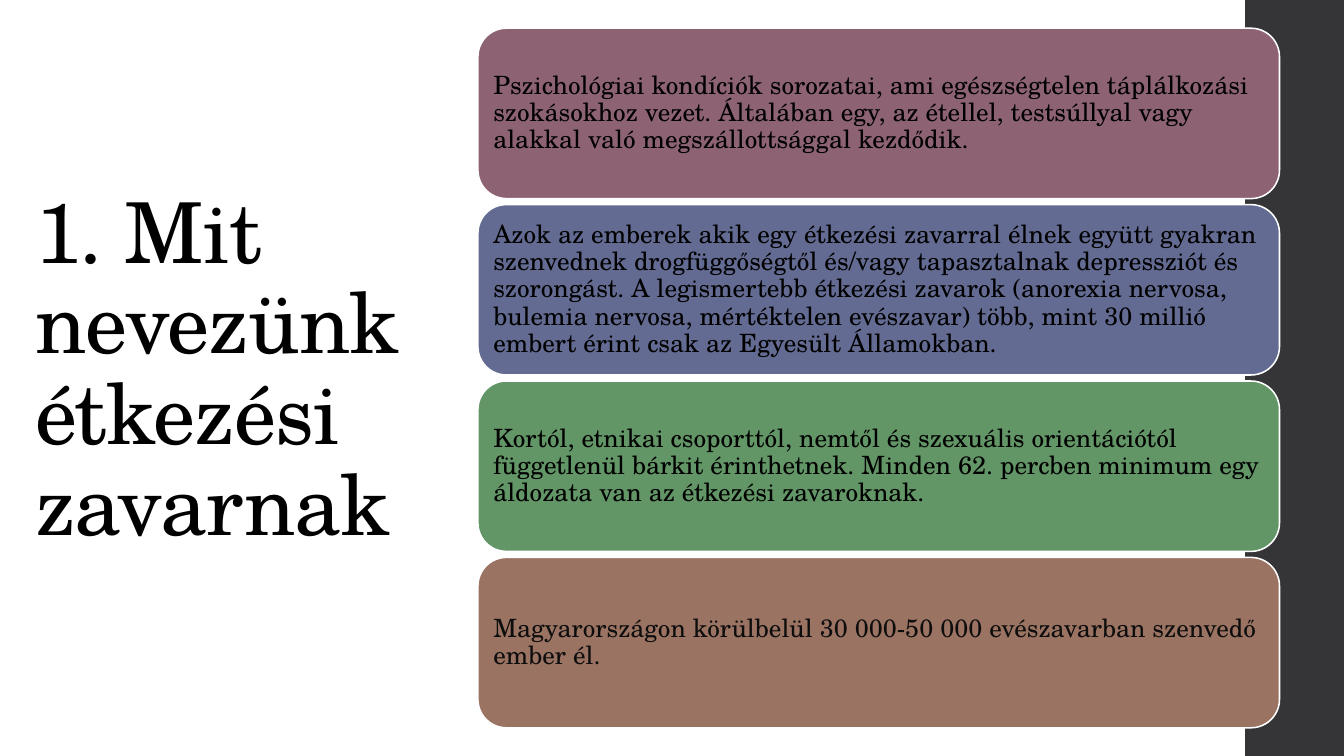
import pptx
import pptx.dml.color
import pptx.enum.shapes
import pptx.enum.text
import pptx.util

FONT = "TeX Gyre Schola"
WIDTH, HEIGHT = 13.33, 7.5
CARD_LEFT, CARD_TOP = 4.74, 0.28
CARD_WIDTH, CARD_HEIGHT, CARD_PITCH = 7.95, 1.69, 1.75

# Fill, text colour, text
CARDS = [
    ("8D6374", "000000",
     "Pszichológiai kondíciók sorozatai, ami egészségtelen táplálkozási "
     "szokásokhoz vezet. Általában egy, az étellel, testsúllyal vagy "
     "alakkal való megszállottsággal kezdődik."),
    ("636B92", "000000",
     "Azok az emberek akik egy étkezési zavarral élnek együtt gyakran "
     "szenvednek drogfüggőségtől és/vagy tapasztalnak depressziót és "
     "szorongást. A legismertebb étkezési zavarok (anorexia nervosa, "
     "bulemia nervosa, mértéktelen evészavar) több, mint 30 millió "
     "embert érint csak az Egyesült Államokban."),
    ("629666", "000000",
     "Kortól, etnikai csoporttól, nemtől és szexuális orientációtól "
     "függetlenül bárkit érinthetnek. Minden 62. percben minimum egy "
     "áldozata van az étkezési zavaroknak."),
    ("9B7362", "0D0D0D",
     "Magyarországon körülbelül 30 000-50 000 evészavarban szenvedő "
     "ember él."),
]


def rgb(value):
    return pptx.dml.color.RGBColor.from_string(value)


def box(*lengths):
    return [pptx.util.Inches(length) for length in lengths]


def write(sp, text, size=18, color="000000", anchor="MIDDLE", inset=0.07,
          spacing=None):
    tf = sp.text_frame
    tf.word_wrap = True
    tf.vertical_anchor = pptx.enum.text.MSO_ANCHOR[anchor]
    tf.margin_left = tf.margin_right = pptx.util.Inches(inset)
    tf.margin_top = tf.margin_bottom = pptx.util.Inches(min(inset, 0.07))
    p = tf.paragraphs[0]
    p.alignment = pptx.enum.text.PP_ALIGN.LEFT
    p.line_spacing = 0.9
    r = p.add_run()
    r.text = text
    r.font.name = FONT
    r.font.size = pptx.util.Pt(size)
    r.font.color.rgb = rgb(color)
    if spacing is not None:
        r.font._element.set("spc", str(int(spacing * 100)))


def add_panel(s, kind, at, fill, line=None):
    sp = s.shapes.add_shape(pptx.enum.shapes.MSO_SHAPE[kind], *box(*at))
    sp.shadow.inherit = False
    sp.fill.solid()
    sp.fill.fore_color.rgb = rgb(fill)
    if line:
        sp.line.color.rgb = rgb(line)
        sp.line.width = pptx.util.Pt(1.1)
    else:
        sp.line.fill.background()
    return sp


def main():
    prs = pptx.Presentation()
    prs.slide_width, prs.slide_height = box(WIDTH, HEIGHT)
    s = prs.slides.add_slide(prs.slide_layouts[6])

    # Dark band along the right edge
    add_panel(s, "RECTANGLE", (12.35, 0, WIDTH - 12.35, HEIGHT), "353537")

    # Title
    title = s.shapes.add_textbox(*box(0.25, 0.44, 4.16, 5.12))
    write(title, "1. Mit nevezünk étkezési zavarnak", size=60,
          anchor="BOTTOM", inset=0.1, spacing=-0.5)

    # Stack of cards
    for row, (fill, color, text) in enumerate(CARDS):
        top = CARD_TOP + row * CARD_PITCH
        card = add_panel(s, "ROUNDED_RECTANGLE",
                         (CARD_LEFT, top, CARD_WIDTH, CARD_HEIGHT),
                         fill, line="FFFFFF")
        write(card, text, color=color)

    prs.save("out.pptx")


if __name__ == "__main__":
    main()
